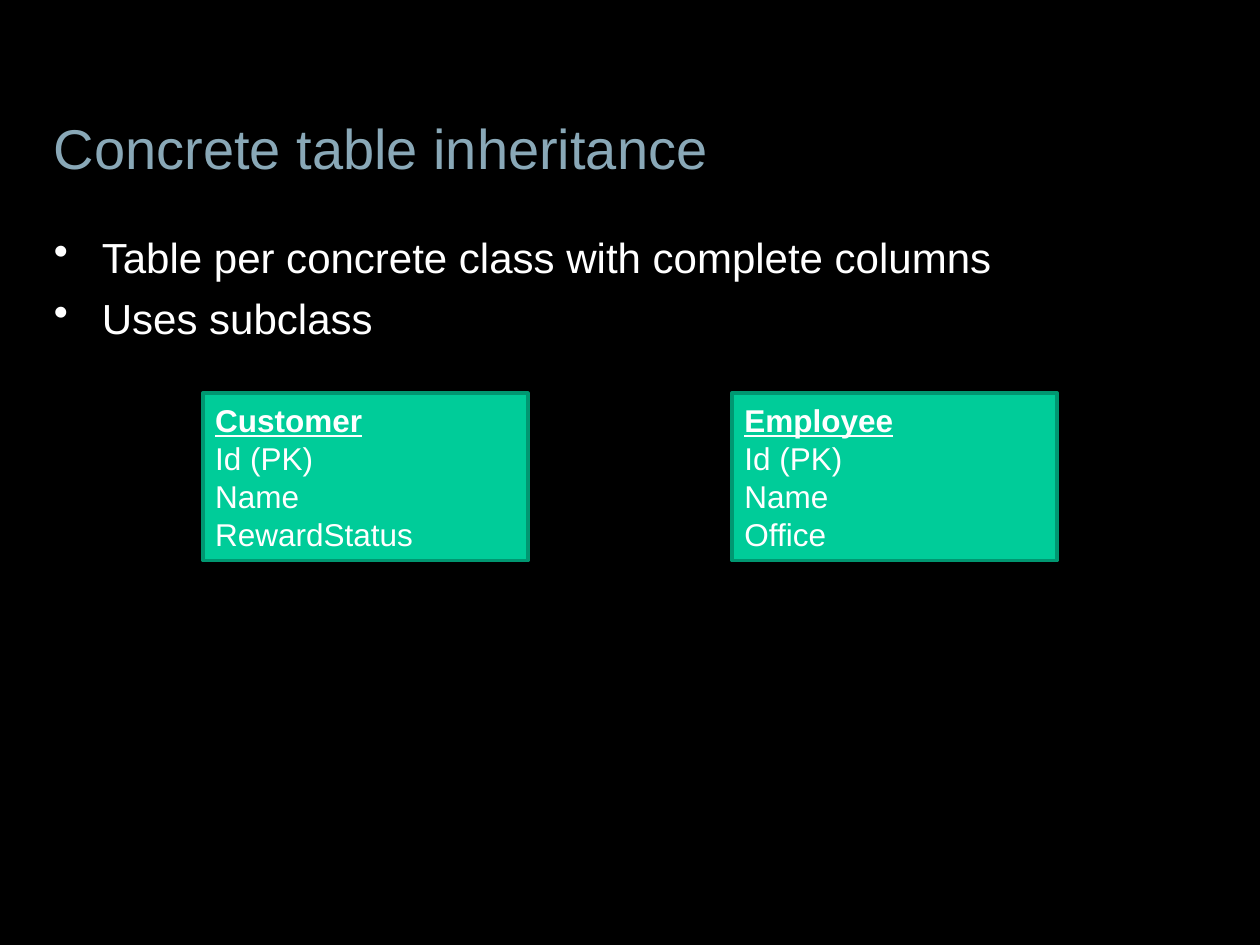
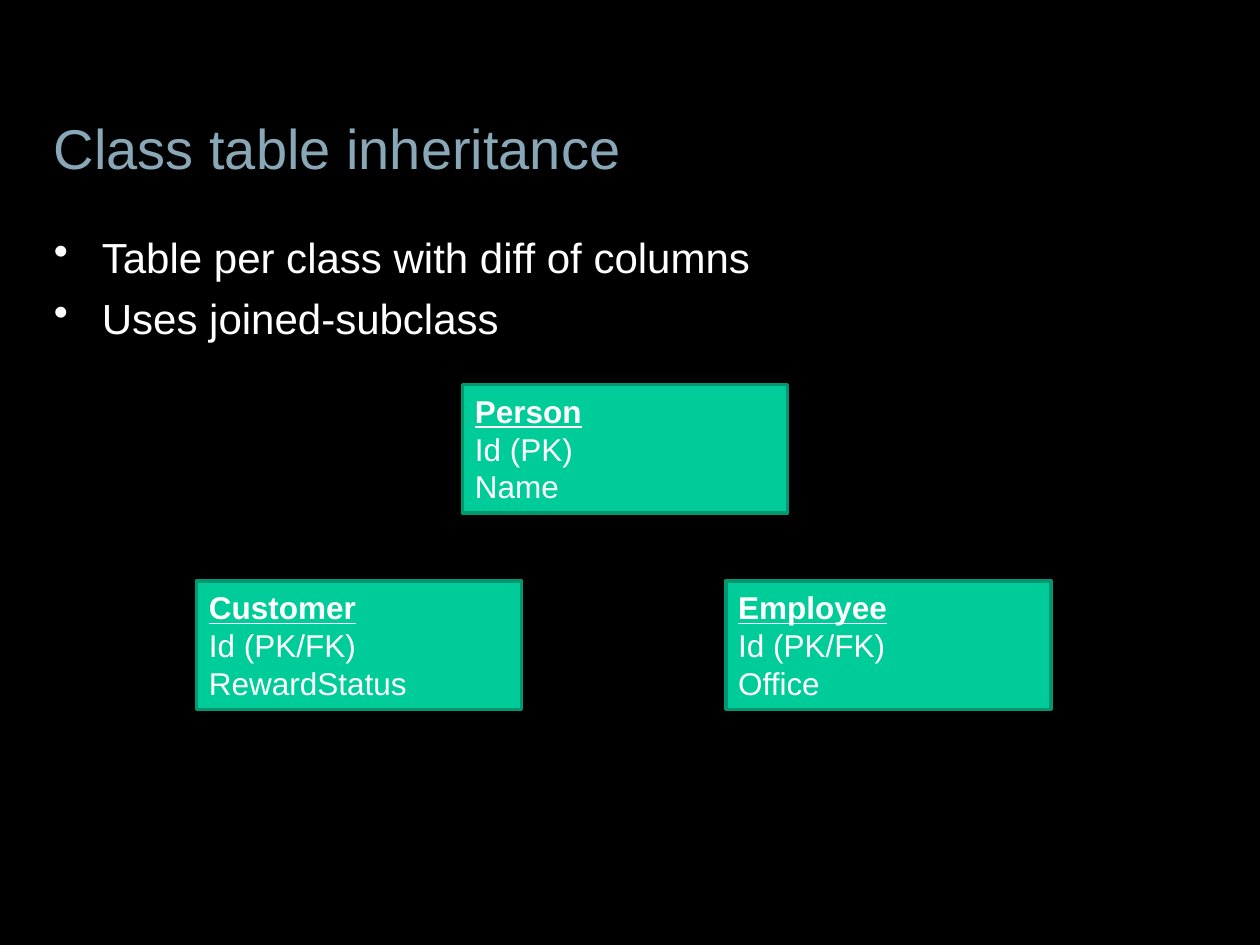
"""Build two slides that compare table inheritance mappings."""
import pptx
import pptx.dml.color
import pptx.enum.shapes
import pptx.enum.text
import pptx.oxml.ns
import pptx.util
from lxml import etree
from pptx.util import Inches

COLORS = {
    "background": "000000",
    "title": "89A8B7",
    "text": "FFFFFF",
    "table": "00CC99",
    "border": "009771",
}
FONT = "Arial"
TABLE_WIDTH = 2.58
SLIDES = [
    {
        "title": "Concrete table inheritance",
        "bullets": ["Table per concrete class with complete columns", "Uses subclass"],
        "table_height": 1.33,
        "tables": [
            (1.61, 3.12, ["Customer", "Id (PK)", "Name", "RewardStatus"]),
            (5.81, 3.12, ["Employee", "Id (PK)", "Name", "Office"]),
        ],
    },
    {
        "title": "Class table inheritance",
        "bullets": ["Table per class with diff of columns", "Uses joined-subclass"],
        "table_height": 1.02,
        "tables": [
            (1.56, 4.61, ["Customer", "Id (PK/FK)", "RewardStatus"]),
            (5.76, 4.61, ["Employee", "Id (PK/FK)", "Office"]),
            (3.67, 3.05, ["Person", "Id (PK)", "Name"]),
        ],
    },
]


def color(name):
    return pptx.dml.color.RGBColor.from_string(COLORS[name])


def write_lines(frame, lines, size, color_name, bulleted=False):
    frame.word_wrap = True
    for index, line in enumerate(lines):
        para = frame.paragraphs[0] if index == 0 else frame.add_paragraph()
        para.text = line
        para.alignment = pptx.enum.text.PP_ALIGN.LEFT
        if bulleted:
            properties = para._p.get_or_add_pPr()
            properties.set("marL", str(Inches(0.38)))
            properties.set("indent", str(Inches(-0.38)))
            bullet = etree.SubElement(properties, pptx.oxml.ns.qn("a:buChar"))
            bullet.set("char", "•")
            if index > 0:
                para.space_before = pptx.util.Pt(6)
        para.font.name = FONT
        para.font.size = pptx.util.Pt(size)
        para.font.color.rgb = color(color_name)


deck = pptx.Presentation()
deck.slide_width = Inches(10)
deck.slide_height = Inches(7.5)

for content in SLIDES:
    page = deck.slides.add_slide(deck.slide_layouts[6])
    page.background.fill.solid()
    page.background.fill.fore_color.rgb = color("background")

    title = page.shapes.add_textbox(Inches(0.33), Inches(0.92), Inches(8.5), Inches(0.5))
    title.text_frame.vertical_anchor = pptx.enum.text.MSO_ANCHOR.MIDDLE
    write_lines(title.text_frame, [content["title"]], 32, "title")

    body = page.shapes.add_textbox(Inches(0.33), Inches(1.75), Inches(9.42), Inches(4.83))
    body.text_frame.margin_top = Inches(0.09)
    write_lines(body.text_frame, content["bullets"], 24, "text", bulleted=True)

    for left, top, lines in content["tables"]:
        box = page.shapes.add_shape(
            pptx.enum.shapes.MSO_SHAPE.RECTANGLE,
            Inches(left), Inches(top), Inches(TABLE_WIDTH), Inches(content["table_height"]),
        )
        box.shadow.inherit = False
        box.fill.solid()
        box.fill.fore_color.rgb = color("table")
        box.line.color.rgb = color("border")
        box.line.width = pptx.util.Pt(2)
        box.text_frame.vertical_anchor = pptx.enum.text.MSO_ANCHOR.MIDDLE
        write_lines(box.text_frame, lines, 18, "text")
        heading = box.text_frame.paragraphs[0]
        heading.font.bold = True
        heading.font.underline = True

deck.save("out.pptx")
